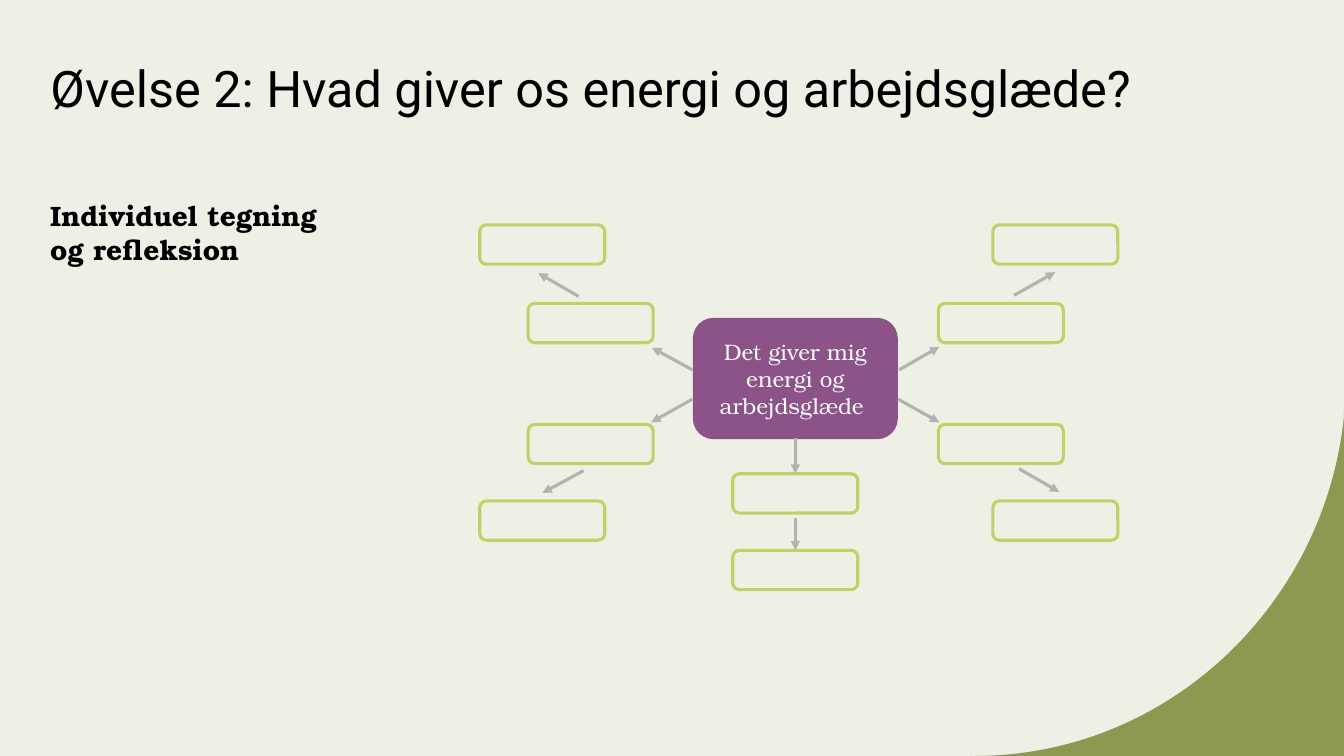
from dataclasses import dataclass

from lxml.etree import SubElement
from pptx import Presentation
from pptx.dml.color import RGBColor
from pptx.enum.shapes import MSO_CONNECTOR as Line, MSO_SHAPE as Shape
from pptx.enum.text import MSO_ANCHOR as Anchor, MSO_AUTO_SIZE as AutoSize, PP_ALIGN as Align
from pptx.oxml.ns import qn
from pptx.util import Pt

TITLE = "Øvelse 2: Hvad giver os energi og arbejdsglæde?"
TASK = ["Individuel tegning", "og refleksion"]
CENTRE = "Det giver mig energi og arbejdsglæde "

TITLE_BOX = (28.8, 13, 805.7, 104.4)
TASK_BOX = (28.8, 138.2, 276.5, 55.4)
CENTRE_BOX = (495.4, 227.5, 145.4, 85.7)
IDEA_SIZE = (89.3, 28.1)

# Each arm: inner idea, outer idea (left, top), then the arrow to each (from, to)
SIDE_ARMS = [
    ((377.3, 216.7), (342.7, 160.6), (494.6, 264.2, 465.8, 248.4), (413.3, 211.7, 384.5, 195.1)),
    ((377.3, 303.1), (342.7, 357.8), (494.6, 285.1, 465.1, 301.7), (416.9, 336.2, 387.4, 352.1)),
    ((670.3, 303.1), (709.2, 357.8), (641.5, 285.1, 671, 301.7), (727.9, 334.8, 756.7, 351.4)),
    ((670.3, 216.7), (709.2, 160.6), (642.2, 264.2, 671, 247.7), (724.3, 211, 753.8, 194.4)),
]
LOWER_IDEA_TOPS = (338.4, 393.1)
LOWER_ARROW_GAP = 3.6

CORNER_CURVE = [(696.24, 540), (833, 540), (946, 433.4), (960, 297.4)]
CORNER_EDGE = [(960, 293.8), (960, 540)]
CURVE_STEPS = 60


@dataclass(frozen=True)
class Theme:
    background: RGBColor = RGBColor.from_string("EEF0E5")
    corner: RGBColor = RGBColor.from_string("8D9950")
    centre: RGBColor = RGBColor.from_string("8C5389")
    idea: RGBColor = RGBColor.from_string("BFD268")
    arrow: RGBColor = RGBColor.from_string("B4B2B2")
    text: RGBColor = RGBColor.from_string("000000")
    light: RGBColor = RGBColor.from_string("F8F8F8")
    heading_font: str = "Roboto"
    body_font: str = "TeX Gyre Bonum"
    title_size: int = 36
    task_size: int = 20
    centre_size: int = 16
    stroke: float = 2.25


THEME = Theme()


def pts(values):
    return [Pt(v) for v in values]


def set_font(p, name, size, color, bold=False):
    p.font.name, p.font.size, p.font.bold = name, Pt(size), bold
    p.font.color.rgb = color


def add_title(s):
    sp = s.shapes.title
    sp.left, sp.top, sp.width, sp.height = pts(TITLE_BOX)
    tf = sp.text_frame
    tf.text = TITLE
    tf.word_wrap, tf.auto_size = True, AutoSize.NONE
    tf.vertical_anchor = Anchor.MIDDLE
    p = tf.paragraphs[0]
    p.alignment, p.line_spacing = Align.LEFT, 0.9
    set_font(p, THEME.heading_font, THEME.title_size, THEME.text)


def add_task(s):
    tf = s.shapes.add_textbox(*pts(TASK_BOX)).text_frame
    tf.word_wrap, tf.auto_size = True, AutoSize.SHAPE_TO_FIT_TEXT
    tf.text = "\n".join(TASK)
    for p in tf.paragraphs:
        set_font(p, THEME.body_font, THEME.task_size, THEME.text, bold=True)


def bezier_point(curve, t):
    weights = ((1 - t) ** 3, 3 * t * (1 - t) ** 2, 3 * t**2 * (1 - t), t**3)
    return tuple(sum(w * v for w, v in zip(weights, axis)) for axis in zip(*curve))


def add_corner(s):
    start, *rest = [bezier_point(CORNER_CURVE, i / CURVE_STEPS) for i in range(CURVE_STEPS + 1)]
    builder = s.shapes.build_freeform(*pts(start))
    builder.add_line_segments([pts(point) for point in rest + CORNER_EDGE], close=True)
    sp = builder.convert_to_shape()
    sp.shadow.inherit = False
    sp.fill.solid()
    sp.fill.fore_color.rgb = THEME.corner
    sp.line.fill.background()


def add_rounded(s, box, fill, line, line_width):
    sp = s.shapes.add_shape(Shape.ROUNDED_RECTANGLE, *pts(box))
    sp.shadow.inherit = False
    sp.fill.solid()
    sp.fill.fore_color.rgb = fill
    sp.line.color.rgb, sp.line.width = line, Pt(line_width)
    return sp


def add_centre(s):
    sp = add_rounded(s, CENTRE_BOX, THEME.centre, THEME.centre, 1)
    tf = sp.text_frame
    tf.text, tf.word_wrap, tf.vertical_anchor = CENTRE, True, Anchor.MIDDLE
    p = tf.paragraphs[0]
    p.alignment = Align.CENTER
    set_font(p, THEME.body_font, THEME.centre_size, THEME.light)
    return sp


def add_idea(s, left, top):
    return add_rounded(s, (left, top, *IDEA_SIZE), THEME.background, THEME.idea, THEME.stroke)


def add_arrow(s, ends):
    arrow = s.shapes.add_connector(Line.STRAIGHT, *pts(ends))
    arrow.line.color.rgb, arrow.line.width = THEME.arrow, Pt(THEME.stroke)
    SubElement(arrow.line._get_or_add_ln(), qn("a:tailEnd"), type="triangle")
    SubElement(arrow._element.spPr, qn("a:effectLst"))
    return arrow


def add_lower_arm(s, centre):
    left, top, width, height = CENTRE_BOX
    middle = left + width / 2
    first, second = [add_idea(s, middle - IDEA_SIZE[0] / 2, y) for y in LOWER_IDEA_TOPS]
    to_first = add_arrow(s, (middle, top + height, middle, LOWER_IDEA_TOPS[0]))
    to_first.begin_connect(centre, 2)
    to_first.end_connect(first, 0)
    start = LOWER_IDEA_TOPS[0] + IDEA_SIZE[1] + LOWER_ARROW_GAP
    add_arrow(s, (middle, start, middle, LOWER_IDEA_TOPS[1])).end_connect(second, 0)


def main():
    prs = Presentation()
    prs.slide_width, prs.slide_height = Pt(960), Pt(540)
    s = prs.slides.add_slide(prs.slide_layouts[5])
    s.background.fill.solid()
    s.background.fill.fore_color.rgb = THEME.background
    add_corner(s)
    add_title(s)
    centre = add_centre(s)
    for inner, outer, to_inner, to_outer in SIDE_ARMS:
        add_idea(s, *inner)
        add_idea(s, *outer)
        add_arrow(s, to_inner)
        add_arrow(s, to_outer)
    add_lower_arm(s, centre)
    add_task(s)
    prs.save("out.pptx")


if __name__ == "__main__":
    main()
